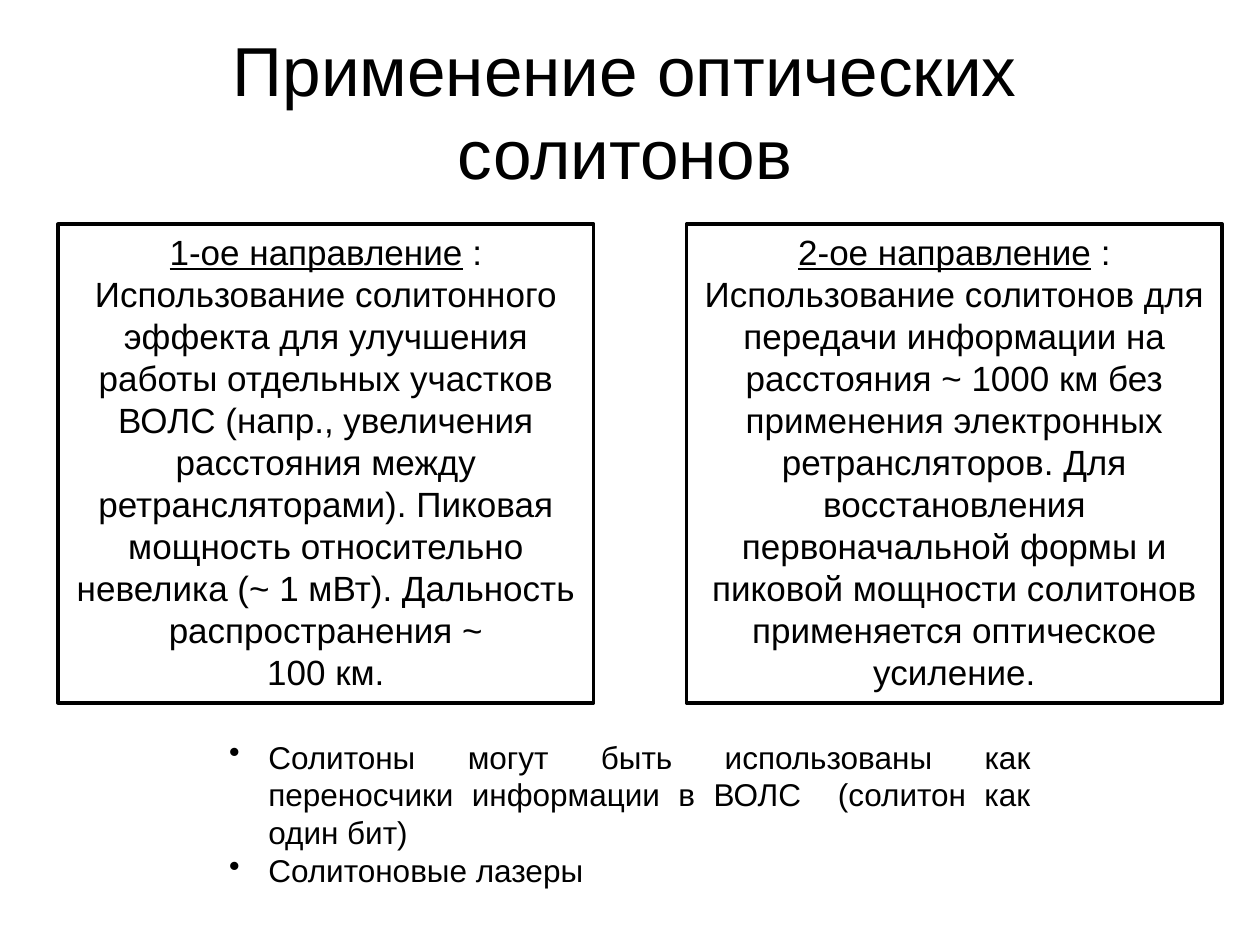
from dataclasses import dataclass

import pptx
import pptx.dml.color
import pptx.enum.shapes
import pptx.enum.text
import pptx.util
from lxml import etree
from pptx.util import Cm, Pt

BLACK = pptx.dml.color.RGBColor(0x00, 0x00, 0x00)
WHITE = pptx.dml.color.RGBColor(0xFF, 0xFF, 0xFF)
ALIGN = pptx.enum.text.PP_ALIGN
ANCHOR = pptx.enum.text.MSO_ANCHOR
AUTO_SIZE = pptx.enum.text.MSO_AUTO_SIZE

BOX_TOP, BOX_WIDTH, BOX_HEIGHT = Cm(4.52), Cm(10.8), Cm(9.65)
BULLET_INDENT = Cm(0.79)


@dataclass
class Direction:
    left: pptx.util.Length
    heading: str
    details: list[str]


DIRECTIONS = [
    Direction(
        Cm(1.17),
        "1-ое направление",
        [
            " : Использование солитонного эффекта для улучшения работы "
            "отдельных участков ВОЛС (напр., увеличения расстояния между "
            "ретрансляторами). Пиковая мощность относительно невелика "
            "(~ 1 мВт). Дальность распространения ~",
            " 100 км. ",
        ],
    ),
    Direction(
        Cm(13.84),
        "2-ое направление",
        [
            " : Использование солитонов для передачи информации на расстояния "
            "~ 1000 км без применения электронных ретрансляторов. Для "
            "восстановления первоначальной формы и пиковой мощности солитонов "
            "применяется оптическое усиление.",
        ],
    ),
]

APPLICATIONS = [
    "Солитоны могут быть использованы как переносчики информации "
    "в ВОЛС  (солитон как один бит)",
    "Солитоновые лазеры",
]


def format_paragraph(paragraph, size: float, alignment) -> None:
    paragraph.alignment = alignment
    paragraph.font.name = "Arial"
    paragraph.font.size = Pt(size)
    paragraph.font.color.rgb = BLACK


def add_bullet(paragraph) -> None:
    properties = paragraph._p.get_or_add_pPr()
    properties.set("marL", str(BULLET_INDENT))
    properties.set("indent", str(-BULLET_INDENT))
    bullet = etree.Element(pptx.oxml.ns.qn("a:buChar"), char="•")
    properties.insert_element_before(bullet, "a:tabLst", "a:defRPr", "a:extLst")


def add_direction(slide, direction: Direction) -> None:
    box = slide.shapes.add_shape(
        pptx.enum.shapes.MSO_SHAPE.RECTANGLE,
        direction.left, BOX_TOP, BOX_WIDTH, BOX_HEIGHT,
    )
    box.shadow.inherit = False
    box.fill.solid()
    box.fill.fore_color.rgb = WHITE
    box.line.color.rgb = BLACK
    box.line.width = Pt(2)

    frame = box.text_frame
    frame.word_wrap = True
    frame.auto_size = AUTO_SIZE.SHAPE_TO_FIT_TEXT
    frame.vertical_anchor = ANCHOR.TOP
    heading = frame.paragraphs[0].add_run()
    heading.text = direction.heading
    heading.font.underline = True
    for index, detail in enumerate(direction.details):
        paragraph = frame.add_paragraph() if index else frame.paragraphs[0]
        paragraph.add_run().text = detail
        format_paragraph(paragraph, 20, ALIGN.CENTER)


def add_applications(slide, applications: list[str]) -> None:
    box = slide.shapes.add_textbox(Cm(4.37), Cm(14.73), Cm(16.66), Cm(3.33))
    frame = box.text_frame
    frame.word_wrap = True
    frame.auto_size = AUTO_SIZE.SHAPE_TO_FIT_TEXT
    frame.vertical_anchor = ANCHOR.MIDDLE
    for index, application in enumerate(applications):
        paragraph = frame.add_paragraph() if index else frame.paragraphs[0]
        paragraph.text = application
        format_paragraph(paragraph, 18, ALIGN.JUSTIFY)
        add_bullet(paragraph)


def main() -> None:
    presentation = pptx.Presentation()
    presentation.slide_width, presentation.slide_height = Cm(25.4), Cm(19.05)
    slide = presentation.slides.add_slide(presentation.slide_layouts[5])

    # Title
    title = slide.shapes.title
    title.left, title.top = Cm(1.17), Cm(0.53)
    title.width, title.height = Cm(22.86), Cm(3.38)
    title.text_frame.text = "Применение оптических солитонов"
    title.text_frame.vertical_anchor = ANCHOR.MIDDLE
    title.text_frame.auto_size = AUTO_SIZE.NONE
    format_paragraph(title.text_frame.paragraphs[0], 39.6, ALIGN.CENTER)

    # Soliton applications below the directions
    add_applications(slide, APPLICATIONS)

    # Two directions of use
    for direction in DIRECTIONS:
        add_direction(slide, direction)

    presentation.save("out.pptx")


if __name__ == "__main__":
    main()
